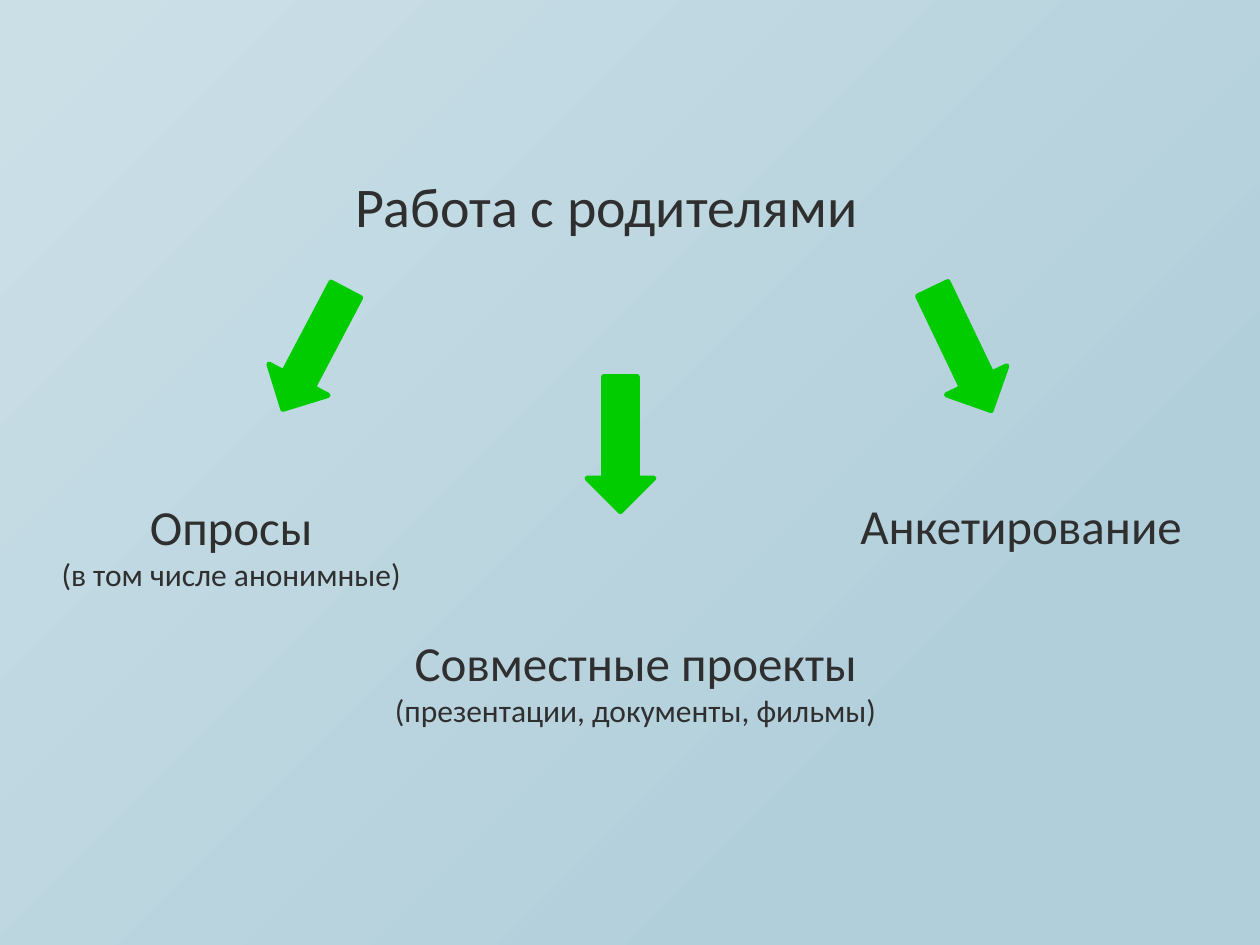
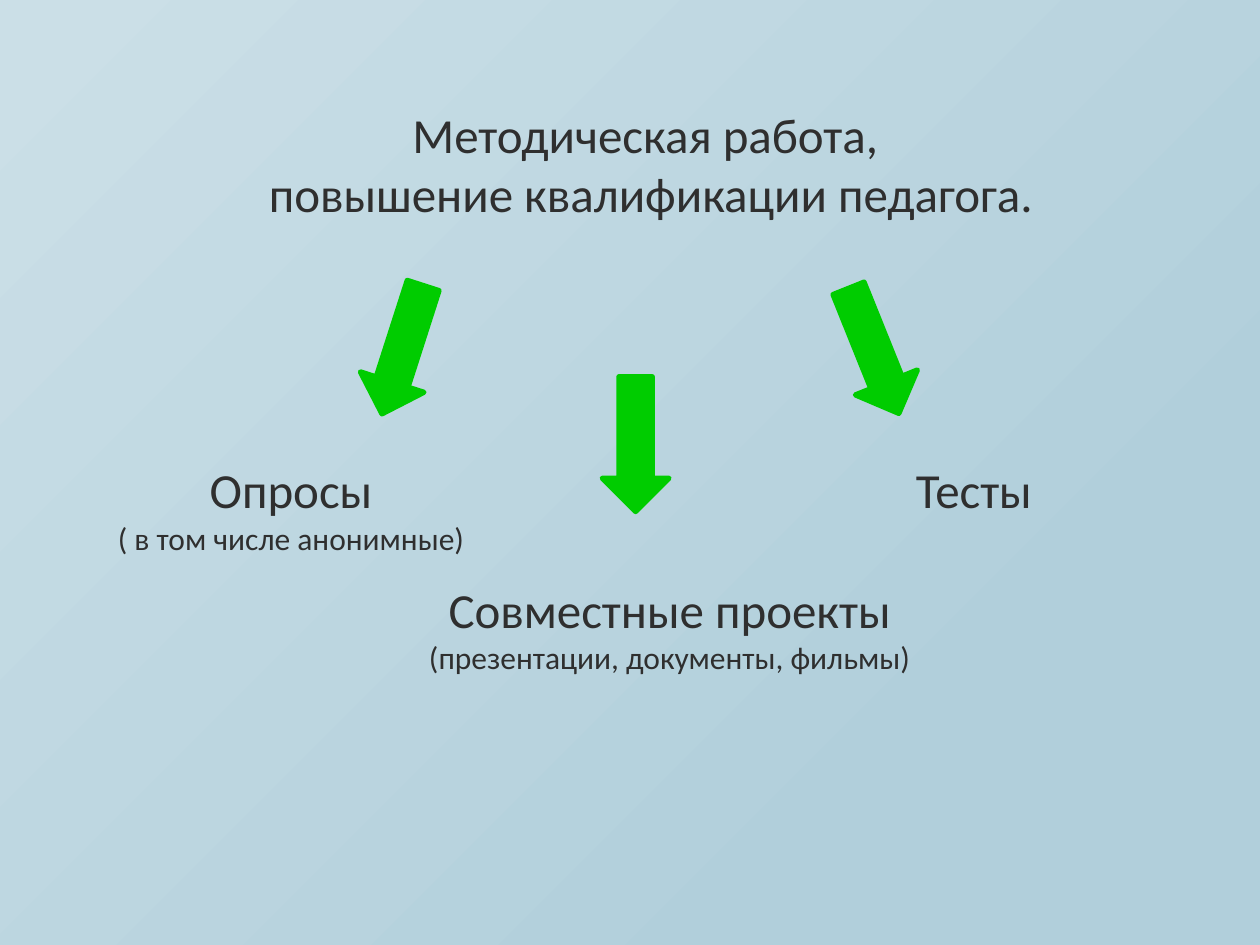
from lxml.etree import SubElement
from pptx import Presentation
from pptx.dml.color import RGBColor
from pptx.enum.shapes import MSO_SHAPE
from pptx.enum.text import MSO_AUTO_SIZE, PP_ALIGN
from pptx.oxml.ns import qn
from pptx.util import Inches, Pt

# Shared look
FONT = "Calibri"
TEXT_COLOR = RGBColor(0x2F, 0x2F, 0x2F)
ARROW_COLOR = RGBColor(0x00, 0xCC, 0x00)
BACKGROUND_STOPS = [(0.23, RGBColor(0xB1, 0xCF, 0xDB)),
                    (0.98, RGBColor(0xCB, 0xDF, 0xE7))]
HEADING_SIZE, NOTE_SIZE = 28, 18
LEFT, CENTER = PP_ALIGN.LEFT, PP_ALIGN.CENTER

presentation = Presentation()
presentation.slide_width = Inches(10)
presentation.slide_height = Inches(7.5)

# Grid of 100 columns and 100 rows
COLUMN = presentation.slide_width / 100
ROW = presentation.slide_height / 100
ARROW_WIDTH, ARROW_HEIGHT = 5.3, 14.27
ONE_LINE, TWO_LINES = 7.6, 11.73
PROJECTS = [("Совместные проекты", HEADING_SIZE),
            ("(презентации, документы, фильмы)", NOTE_SIZE)]

# Arrows: column, row, rotation
# Labels: column, row, width, height, alignment, lines with their sizes
slides = [
    {
        "arrows": [(22.3, 29.87, 27.8), (46.6, 39.87, 0), (73.7, 29.87, 334.4)],
        "labels": [
            (27.2, 17.47, 44, 8.53, LEFT, [("Работа с родителями", 32)]),
            (3.5, 51.87, 29.7, TWO_LINES, CENTER,
             [("Опросы", HEADING_SIZE), ("(в том числе анонимные)", NOTE_SIZE)]),
            (29.8, 66.27, 41.3, TWO_LINES, CENTER, PROJECTS),
            (67.3, 51.73, 28.6, ONE_LINE, LEFT, [("Анкетирование", HEADING_SIZE)]),
        ],
    },
    {
        "arrows": [(29.3, 29.87, 17.8), (47.8, 39.87, 0), (66.7, 30, 338.1)],
        "labels": [
            (19.5, 10.4, 64.3, 13.87, CENTER,
             [("Методическая работа, ", HEADING_SIZE),
              ("повышение квалификации педагога.", HEADING_SIZE)]),
            (8, 48, 30.2, TWO_LINES, CENTER,
             [("Опросы", HEADING_SIZE), ("( в том числе анонимные)", NOTE_SIZE)]),
            (32.5, 60.67, 41.3, TWO_LINES, CENTER, PROJECTS),
            (71.7, 48, 12.1, ONE_LINE, LEFT, [("Тесты", HEADING_SIZE)]),
        ],
    },
]


def place(column, row, width, height):
    """Turn grid units into left, top, width and height."""
    return (round(column * COLUMN), round(row * ROW),
            round(width * COLUMN), round(height * ROW))


for content in slides:
    slide = presentation.slides.add_slide(presentation.slide_layouts[6])

    # Background: circular gradient spreading from the bottom right corner
    fill = slide.background.fill
    fill.gradient()
    for stop, (position, color) in zip(fill.gradient_stops, BACKGROUND_STOPS):
        stop.position = position
        stop.color.rgb = color
    gradient = slide.element.find(".//" + qn("a:gradFill"))
    gradient.remove(gradient.find(qn("a:lin")))
    circle = SubElement(gradient, qn("a:path"), {"path": "circle"})
    SubElement(circle, qn("a:fillToRect"), {"l": "100000", "t": "100000"})

    # Arrows from the title to the branches
    for column, row, rotation in content["arrows"]:
        arrow = slide.shapes.add_shape(
            MSO_SHAPE.DOWN_ARROW, *place(column, row, ARROW_WIDTH, ARROW_HEIGHT))
        arrow.rotation = rotation
        arrow.shadow.inherit = False
        arrow.fill.solid()
        arrow.fill.fore_color.rgb = ARROW_COLOR
        arrow.line.color.rgb = ARROW_COLOR
        arrow.line.width = Pt(3)

    # Title and branch labels
    for column, row, width, height, alignment, lines in content["labels"]:
        label = slide.shapes.add_textbox(*place(column, row, width, height))
        text_frame = label.text_frame
        text_frame.word_wrap = False
        text_frame.auto_size = MSO_AUTO_SIZE.SHAPE_TO_FIT_TEXT
        text_frame.text = "\n".join(text for text, size in lines)
        for paragraph, (text, size) in zip(text_frame.paragraphs, lines):
            paragraph.alignment = alignment
            for run in paragraph.runs:
                run.font.name = FONT
                run.font.size = Pt(size)
                run.font.color.rgb = TEXT_COLOR

# The notes under the headings start at the left edge of their box when it fits
presentation.save("out.pptx")
